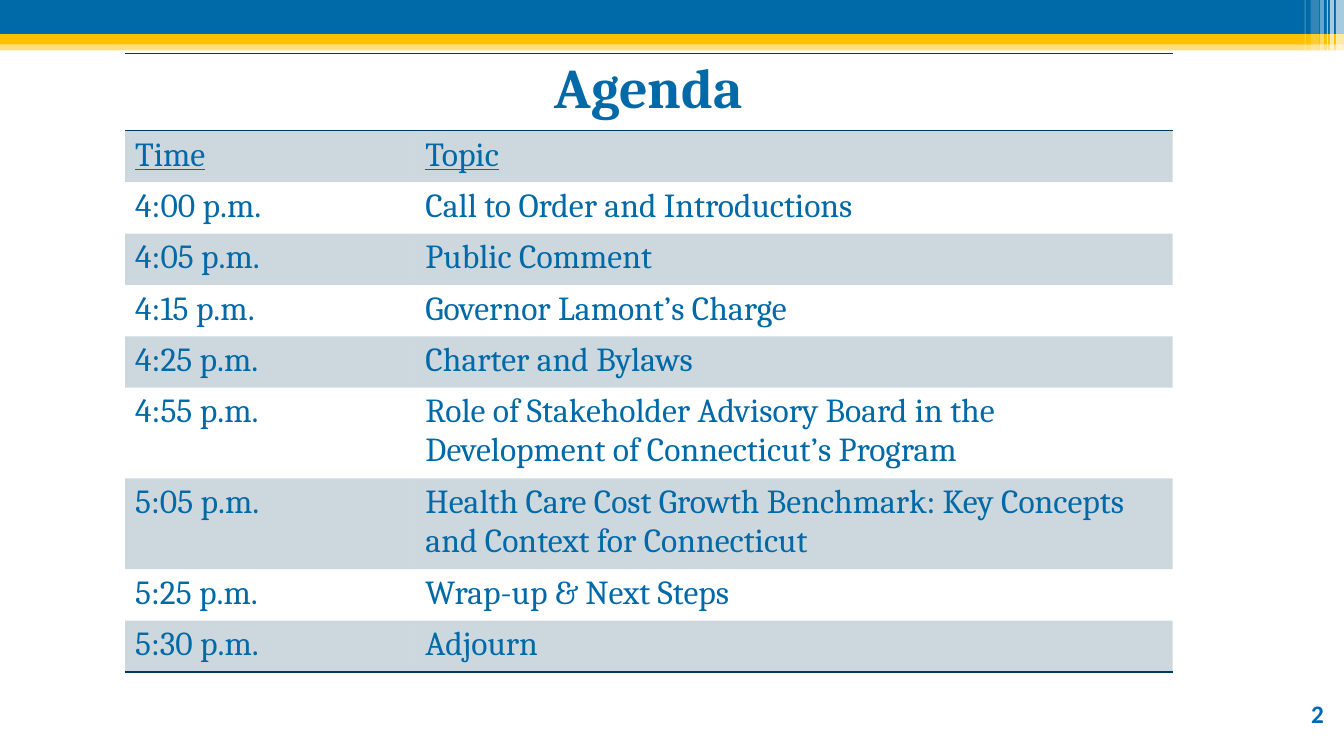
from lxml.etree import SubElement
from pptx import Presentation
from pptx.dml.color import RGBColor
from pptx.enum.shapes import MSO_SHAPE as Shape
from pptx.enum.text import MSO_ANCHOR as Anchor, PP_ALIGN as Align
from pptx.oxml import parse_xml
from pptx.oxml.ns import nsdecls, qn
from pptx.util import Inches, Pt

WIDTH, HEIGHT = 13.33, 7.5
BLUE, GOLD, NAVY, WHITE = "0069A7", "FFC000", "00395C", "FFFFFF"
NO_STYLE = "{2D5ABB26-0587-4C30-8999-92F81FD0307C}"
BANDS = [(0.4, 0.1, GOLD, 50), (0, 0.34, BLUE, 100), (0.34, 0.1, GOLD, 100)]
STRIPES = [(13.25, 0.08, 0.68, 65), (13.19, 0.04, 0.68, 65), (13.16, 0.01, 0.68, 60),
           (13.09, 0.04, 0.68, 40), (13, 0.08, 0.64, 20), (12.94, 0.01, 0.64, 30)]
AGENDA = [
    ("Time", "Topic"),
    ("4:00 p.m.", "Call to Order and Introductions"),
    ("4:05 p.m.", "Public Comment"),
    ("4:15 p.m.", "Governor Lamont’s Charge"),
    ("4:25 p.m.", "Charter and Bylaws"),
    ("4:55 p.m.", "Role of Stakeholder Advisory Board in the Development of Connecticut’s Program"),
    ("5:05 p.m.", "Health Care Cost Growth Benchmark: Key Concepts and Context for Connecticut"),
    ("5:25 p.m.", "Wrap-up & Next Steps"),
    ("5:30 p.m.", "Adjourn"),
]


def paint(fill, color, opacity=100):
    """Fill with a hex colour at a percentage of opacity."""
    fill.solid()
    fill.fore_color.rgb = RGBColor.from_string(color)
    if opacity < 100:
        tint = fill._xPr.find(qn("a:solidFill"))[0]
        SubElement(tint, qn("a:alpha"), val=str(opacity * 1000))


def write(frame, text, font="Cambria", size=24, color=BLUE, bold=False,
          underline=False, align=Align.LEFT):
    """Write one formatted paragraph into a text frame."""
    frame.word_wrap = True
    para = frame.paragraphs[0]
    para.alignment = align
    span = para.add_run()
    span.text = text
    span.font.name, span.font.size = font, Pt(size)
    span.font.bold, span.font.underline = bold, underline
    span.font.color.rgb = RGBColor.from_string(color)


def add_bar(page, box, color, opacity):
    """Add a plain borderless rectangle."""
    bar = page.shapes.add_shape(Shape.RECTANGLE, *map(Inches, box))
    bar.shadow.inherit = False
    bar.line.fill.background()
    paint(bar.fill, color, opacity)


def add_banner(page, box):
    """Draw the coloured bands and the pale stripes at their right end."""
    left, top, width = box
    for offset, height, color, opacity in BANDS:
        add_bar(page, (left, top + offset, width, height), color, opacity)
    for offset, thickness, height, opacity in STRIPES:
        add_bar(page, (left + offset, top, thickness, height), WHITE, opacity)


def rule_row(table, row, *sides):
    """Draw thin navy lines on the given sides of a table row."""
    for cell in table.rows[row].cells:
        for place, side in enumerate(sides):
            line = parse_xml(
                f'<a:ln{side} {nsdecls("a")} w="12700"><a:solidFill>'
                f'<a:srgbClr val="{NAVY}"/></a:solidFill></a:ln{side}>')
            cell._tc.get_or_add_tcPr().insert(place, line)


def add_agenda(page, box):
    """Build the agenda table with its title row and shaded alternate rows."""
    left, top, width, row_height = box
    count = len(AGENDA) + 1
    frame = page.shapes.add_table(
        count, 2, *map(Inches, (left, top, width, row_height * count)))
    table = frame.table
    table.first_row = table.horz_banding = False
    table._tbl.tblPr.find(qn("a:tableStyleId")).text = NO_STYLE
    table.columns[0].width = Inches(2.88)
    table.columns[1].width = Inches(width - 2.88)
    for row in table.rows:
        row.height = Inches(row_height)

    title = table.cell(0, 0)
    title.merge(table.cell(0, 1))
    write(title.text_frame, "Agenda", size=40, bold=True, align=Align.CENTER)
    for row, entry in enumerate(AGENDA, 1):
        for column, text in enumerate(entry):
            cell = table.cell(row, column)
            write(cell.text_frame, text, underline=row == 1)
            if row % 2:
                paint(cell.fill, NAVY, 20)
            else:
                cell.fill.background()
    rule_row(table, 0, "T", "B")
    rule_row(table, count - 1, "B")


def add_page_number(page, box, number):
    """Place the slide number at the bottom right."""
    frame = page.shapes.add_textbox(*map(Inches, box)).text_frame
    frame.vertical_anchor = Anchor.BOTTOM
    write(frame, number, font="Calibri", size=18, color="0067B1", bold=True,
          align=Align.RIGHT)


def main():
    """Build and save the agenda slide."""
    deck = Presentation()
    deck.slide_width, deck.slide_height = Inches(WIDTH), Inches(HEIGHT)
    page = deck.slides.add_slide(deck.slide_layouts[6])
    add_banner(page, (0, 0, WIDTH))
    add_page_number(page, (12.67, 6.88, 0.56, 0.4), "2")
    add_agenda(page, (1.24, 0.53, 10.39, 0.51))
    deck.save("out.pptx")


if __name__ == "__main__":
    main()
